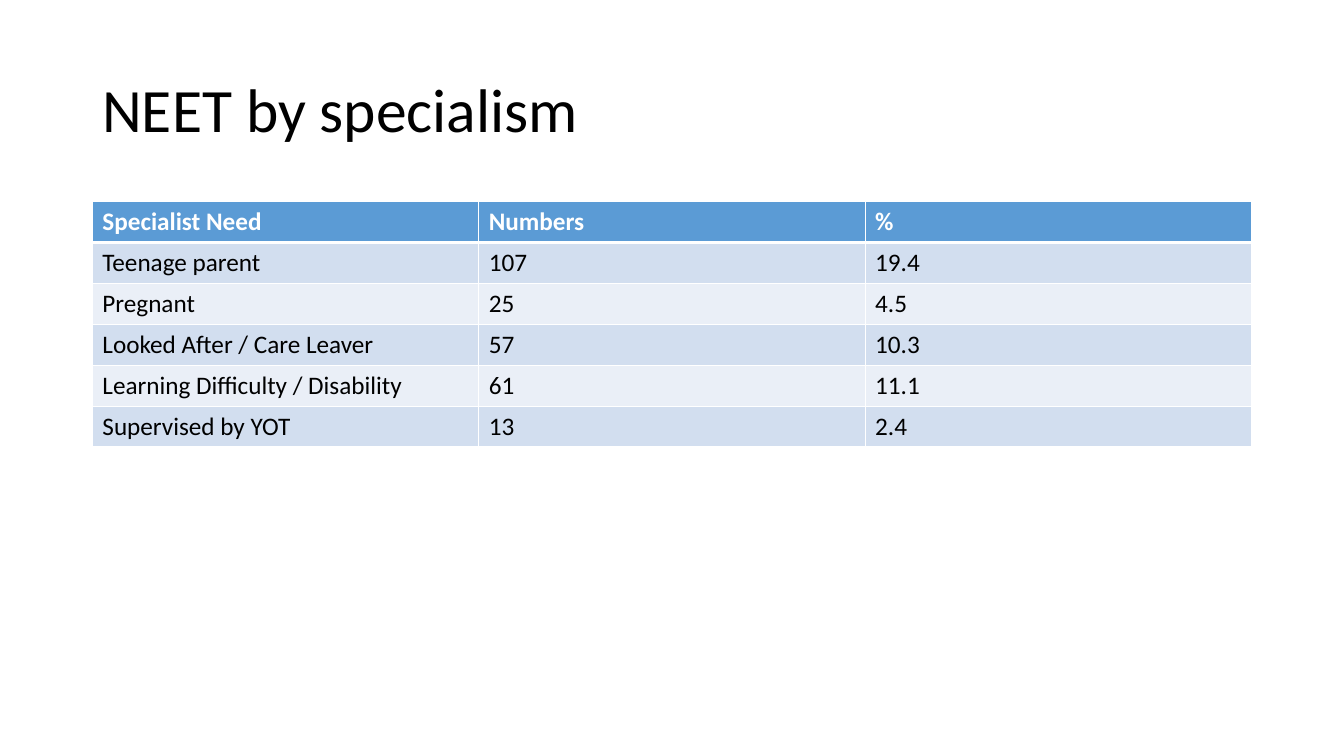
from dataclasses import dataclass

from lxml.etree import SubElement
from pptx import Presentation
from pptx.dml.color import RGBColor
from pptx.enum.text import MSO_ANCHOR as Anchor
from pptx.oxml.ns import qn
from pptx.util import Emu, Pt

EMU_PER_PX = 9525
FONT = "Calibri"
BLACK, WHITE = "000000", "FFFFFF"
HEADER_FILL = "5B9BD5"
BAND_FILLS = ("D2DEEF", "EAEFF7")
LEFT, WIDTH = 88, 1104
TABLE_TOP, ROW_HEIGHT = 192, 39
THIN, THICK = 1, 3


@dataclass(frozen=True)
class NeedRow:
    need: str
    number: str
    percent: str


HEADER = NeedRow("Specialist Need", "Numbers", "%")
NEEDS = (
    NeedRow("Teenage parent", "107", "19.4"),
    NeedRow("Pregnant", "25", "4.5"),
    NeedRow("Looked After / Care Leaver", "57", "10.3"),
    NeedRow("Learning Difficulty / Disability", "61", "11.1"),
    NeedRow("Supervised by YOT", "13", "2.4"),
)


def px(length: int) -> Emu:
    return Emu(length * EMU_PER_PX)


def color(value: str) -> RGBColor:
    return RGBColor.from_string(value)


def style_font(paragraph, size: int, font_color: str, bold: bool = False) -> None:
    font = paragraph.font
    font.name, font.size, font.bold = FONT, Pt(size), bold
    font.color.rgb = color(font_color)


def add_title(slide, text: str) -> None:
    title = slide.shapes.add_textbox(px(LEFT), px(38), px(WIDTH), px(139))
    frame = title.text_frame
    frame.word_wrap = True
    frame.vertical_anchor = Anchor.MIDDLE
    paragraph = frame.paragraphs[0]
    paragraph.text = text
    paragraph.line_spacing = 0.9
    style_font(paragraph, 44, BLACK)


def set_borders(cell, top: int, bottom: int) -> None:
    """Draw white borders, thin at the sides; widths are in points."""
    properties = cell._tc.get_or_add_tcPr()
    widths = {"a:lnL": THIN, "a:lnR": THIN, "a:lnT": top, "a:lnB": bottom}
    for tag, width in widths.items():
        line = SubElement(properties, qn(tag), w=str(Pt(width)))
        fill = SubElement(line, qn("a:solidFill"))
        SubElement(fill, qn("a:srgbClr"), val=WHITE)


def add_needs_table(slide, rows: tuple[NeedRow, ...]) -> None:
    column_count = 3
    table = slide.shapes.add_table(
        len(rows), column_count, px(LEFT), px(TABLE_TOP),
        px(WIDTH), px(ROW_HEIGHT * len(rows)),
    ).table
    for column in table.columns:
        column.width = px(WIDTH // column_count)
    for index, row in enumerate(rows):
        is_header = index == 0
        fill = HEADER_FILL if is_header else BAND_FILLS[(index - 1) % 2]
        for cell, text in zip(table.rows[index].cells, (row.need, row.number, row.percent)):
            set_borders(
                cell,
                top=THICK if index == 1 else THIN,
                bottom=THICK if is_header else THIN,
            )
            cell.fill.solid()
            cell.fill.fore_color.rgb = color(fill)
            paragraph = cell.text_frame.paragraphs[0]
            paragraph.text = text
            style_font(paragraph, 18, WHITE if is_header else BLACK, is_header)


def main() -> None:
    presentation = Presentation()
    presentation.slide_width, presentation.slide_height = px(1280), px(720)
    slide = presentation.slides.add_slide(presentation.slide_layouts[6])
    add_title(slide, "NEET by specialism")
    add_needs_table(slide, (HEADER, *NEEDS))
    presentation.save("out.pptx")


if __name__ == "__main__":
    main()
